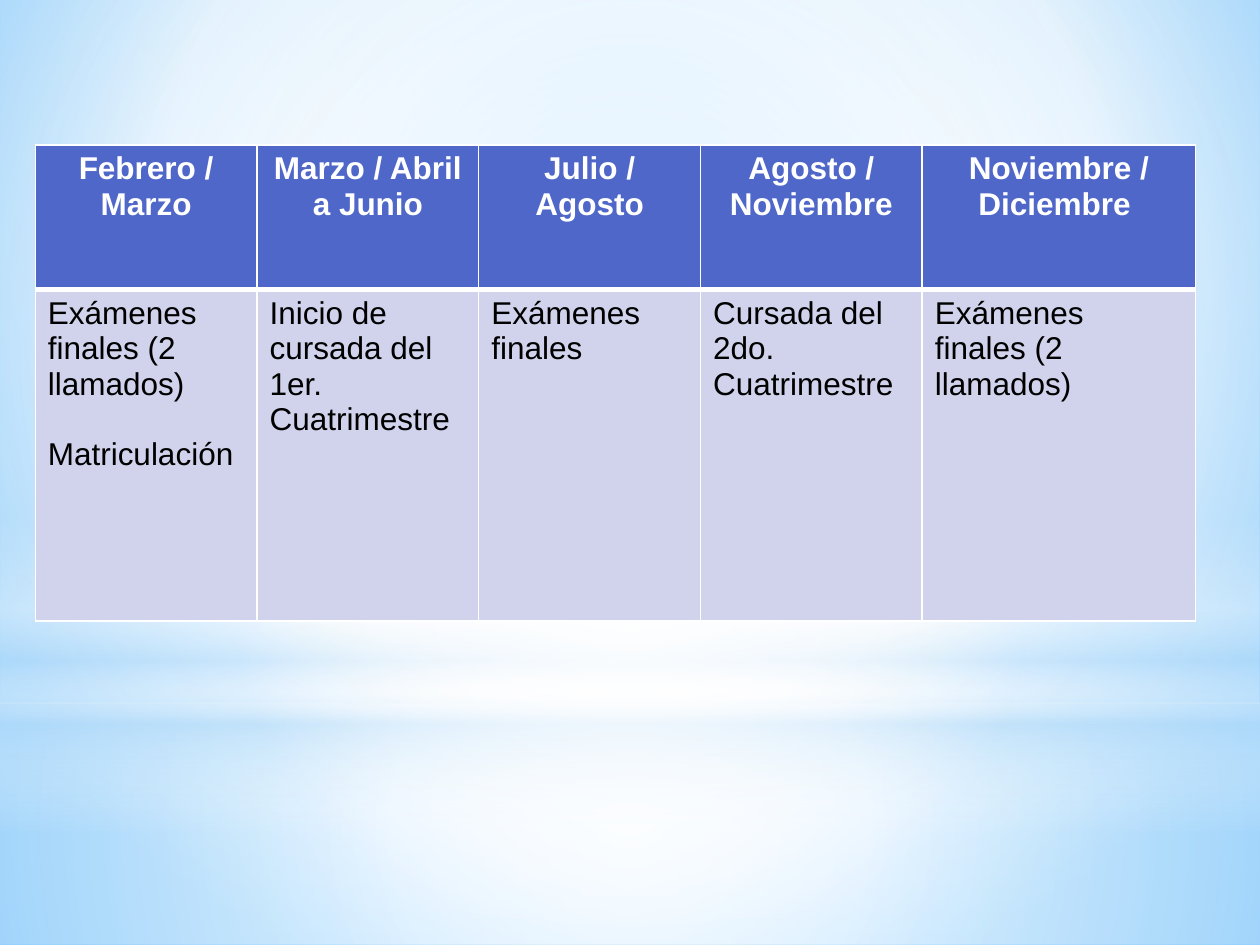
from lxml.etree import SubElement
from pptx import Presentation
from pptx.dml.color import RGBColor
from pptx.enum.shapes import MSO_SHAPE
from pptx.enum.text import PP_ALIGN
from pptx.oxml import parse_xml
from pptx.oxml.ns import nsdecls, qn
from pptx.util import Inches, Pt

COLORS = {
    "white": "FFFFFF", "black": "000000", "header": "4E67C8", "body": "D0D3EB",
    "haze": "B4DCFA", "sky": "9ED5FF", "deep": "5BB9FF",
}
CENTER = (50, 50, 50, 50)
CALENDAR = [
    ("Febrero / Marzo", ["Exámenes finales (2 llamados)", "Matriculación"]),
    ("Marzo / Abril a Junio", ["Inicio de cursada del 1er. Cuatrimestre"]),
    ("Julio / Agosto", ["Exámenes finales"]),
    ("Agosto / Noviembre", ["Cursada del 2do. Cuatrimestre"]),
    ("Noviembre / Diciembre ", ["Exámenes finales (2 llamados)"]),
]


def rgb(name):
    return RGBColor.from_string(COLORS[name])


def set_gradient(fill, parent, stops, focus=None, angle=90):
    """Fill parent with (position, colour, opacity) stops, round focus or along angle."""
    fill.solid()
    gs = "".join(
        f'<a:gs pos="{pos * 1000}"><a:srgbClr val="{COLORS[color]}">'
        f'<a:alpha val="{opacity * 1000}"/></a:srgbClr></a:gs>'
        for pos, color, opacity in stops)
    if focus:
        l, t, r, b = (v * 1000 for v in focus)
        shade = (f'<a:path path="circle"><a:fillToRect l="{l}" t="{t}" '
                 f'r="{r}" b="{b}"/></a:path>')
    else:
        shade = f'<a:lin ang="{angle * 60000}" scaled="0"/>'
    grad = parse_xml(f'<a:gradFill {nsdecls("a")} rotWithShape="1">'
                     f'<a:gsLst>{gs}</a:gsLst>{shade}</a:gradFill>')
    parent.replace(parent.find(qn("a:solidFill")), grad)


def add_glow(s, kind, top, height, stops, focus=None):
    sp = s.shapes.add_shape(kind, 0, Inches(top), Inches(10), Inches(height))
    sp.shadow.inherit = False
    sp.line.fill.background()
    set_gradient(sp.fill, sp._element.spPr, stops, focus)


def add_backdrop(s):
    fill = s.background.fill
    fill.solid()
    set_gradient(fill, s._element.find(".//" + qn("p:bgPr")),
                 [(0, "sky", 100), (60, "white", 100), (100, "deep", 100)],
                 (20, 10, 20, 60))
    add_glow(s, MSO_SHAPE.RECTANGLE, 5.58, 1.92,
             [(0, "white", 91), (37, "white", 76), (100, "haze", 79)], CENTER)
    add_glow(s, MSO_SHAPE.RECTANGLE, 0, 5.58,
             [(0, "white", 89), (48, "white", 62), (100, "haze", 79)], CENTER)
    add_glow(s, MSO_SHAPE.RECTANGLE, 4.12, 2.5,
             [(0, "white", 0), (29, "white", 30), (45, "haze", 40),
              (55, "white", 26), (65, "haze", 60), (100, "white", 0)])
    add_glow(s, MSO_SHAPE.OVAL, 1.75, 5.58,
             [(0, "white", 100), (56, "white", 0)], CENTER)


def write(tf, paragraphs, color="black", bold=False, align=PP_ALIGN.LEFT, size=18, gap=20):
    for i, text in enumerate(paragraphs):
        p = tf.add_paragraph() if i else tf.paragraphs[0]
        p.alignment = align
        if i:
            p.space_before = Pt(gap)
        r = p.add_run()
        r.text = text
        r.font.name, r.font.size, r.font.bold = "Arial", Pt(size), bold
        r.font.color.rgb = rgb(color)


def style_cell(cell, fill, **widths):
    """Set the fill and white borders; widths overrides 1 pt for L, R, T or B."""
    tcPr = cell._tc.get_or_add_tcPr()
    for side in "LRTB":
        ln = SubElement(tcPr, qn(f"a:ln{side}"), w=str(Pt(widths.get(side, 1))))
        line_fill = SubElement(ln, qn("a:solidFill"))
        SubElement(line_fill, qn("a:srgbClr"), val=COLORS["white"])
    cell.fill.solid()
    cell.fill.fore_color.rgb = rgb(fill)


def add_calendar(s):
    table = s.shapes.add_table(2, len(CALENDAR), Inches(0.28), Inches(1.15),
                               Inches(9.21), Inches(3.78)).table
    for row, height in zip(table.rows, (1.15, 2.63)):
        row.height = Inches(height)
    for i, (months, activities) in enumerate(CALENDAR):
        table.columns[i].width = Inches(2.17 if i == len(CALENDAR) - 1 else 1.76)
        head, body = table.cell(0, i), table.cell(1, i)
        style_cell(head, "header", B=3)
        style_cell(body, "body", T=3)
        write(head.text_frame, [months], color="white", bold=True, align=PP_ALIGN.CENTER)
        write(body.text_frame, activities)


def main():
    prs = Presentation()
    prs.slide_width, prs.slide_height = Inches(10), Inches(7.5)
    s = prs.slides.add_slide(prs.slide_layouts[6])
    add_backdrop(s)
    add_calendar(s)
    prs.save("out.pptx")


if __name__ == "__main__":
    main()
